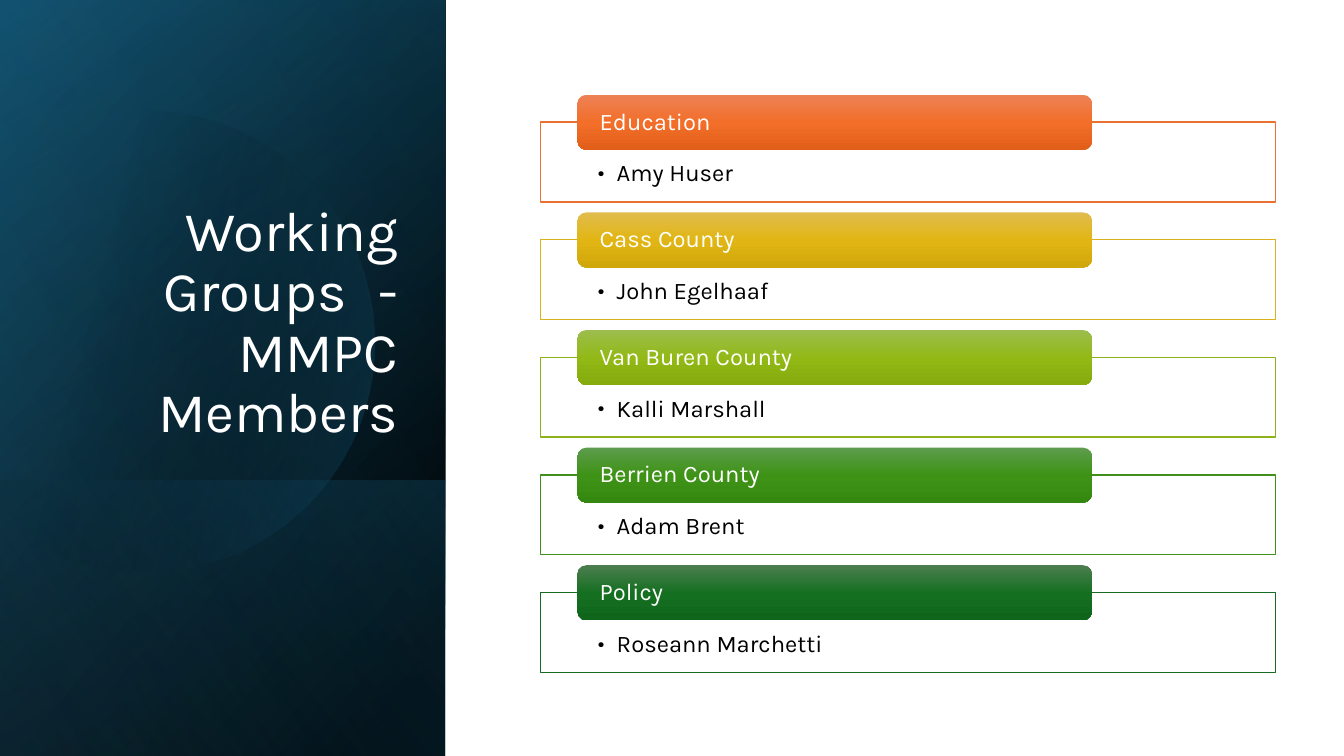
from pptx import Presentation
from pptx.dml.color import RGBColor
from pptx.enum.shapes import MSO_SHAPE
from pptx.enum.text import MSO_ANCHOR, MSO_AUTO_SIZE, PP_ALIGN
from pptx.oxml import parse_xml
from pptx.oxml.ns import nsdecls, qn
from pptx.util import Pt

PANEL_WIDTH = 318
PAGE_HEIGHT = 540
CARD_PITCH = 84

GROUPS = [
    ("Education", "Amy Huser", "E97132", ("ED8257", "F26E29", "E25F1A")),
    ("Cass County", "John Egelhaaf", "D8B11D", ("E1BC4E", "E1B614", "D0A70A")),
    ("Van Buren County", "Kalli Marshall", "8EB21E", ("9CBD4E", "92B916", "85AB0D")),
    ("Berrien County", "Adam Brent", "408E1C", ("5E9C4E", "3E9317", "35880F")),
    ("Policy", "Roseann Marchetti", "196B24", ("4D7E50", "156F21", "0F661B")),
]

# One point is a straight segment, three points are a Bézier curve.
DISC_START = (107, 79)
DISC_SEGMENTS = [
    [(177, 81), (241, 127), (261, 198)],
    [(287, 286), (236, 377), (149, 402)],
    [(94, 418), (38, 404), (-2, 370)],
    [(-11, 362)],
    [(-11, 126)],
    [(0, 116)],
    [(17, 102), (36, 92), (58, 86)],
    [(74, 81), (91, 79), DISC_START],
]


def color(value):
    return RGBColor.from_string(value)


class SlideBuilder:
    font = "Karla"
    white = "FFFFFF"
    black = "000000"

    def __init__(self, page):
        self.page = page

    def gradient(self, shape, stops, angle):
        """Fill with (position, colour, opacity) stops, positions and opacity in percent."""
        shape.shadow.inherit = False
        shape.line.fill.background()
        shape.fill.background()
        stop_xml = "".join(
            f'<a:gs pos="{position * 1000}"><a:srgbClr val="{value}">'
            f'<a:alpha val="{opacity * 1000}"/></a:srgbClr></a:gs>'
            for position, value, opacity in stops
        )
        fill = parse_xml(
            f'<a:gradFill {nsdecls("a")} rotWithShape="1"><a:gsLst>{stop_xml}</a:gsLst>'
            f'<a:lin ang="{angle * 60000}" scaled="0"/></a:gradFill>'
        )
        properties = shape.element.spPr
        properties.replace(properties.find(qn("a:noFill")), fill)

    def panel(self, stops, angle, height=PAGE_HEIGHT):
        """Add a layer of the left panel, standing on the bottom of the page."""
        middle = PAGE_HEIGHT - height / 2
        shape = self.page.shapes.add_shape(
            MSO_SHAPE.RECTANGLE,
            Pt((PANEL_WIDTH - height) / 2), Pt(middle - PANEL_WIDTH / 2),
            Pt(height), Pt(PANEL_WIDTH),
        )
        shape.rotation = 90
        shape.element.spPr.find(qn("a:xfrm")).set("flipH", "1")
        self.gradient(shape, stops, angle)

    def curved_outline(self, start, segments, stops, angle):
        """Add a freeform, turning each three-point segment into a curve."""
        outline = self.page.shapes.build_freeform(*start, scale=Pt(1))
        for segment in segments:
            outline.add_line_segments(segment, close=segment is segments[-1])
        shape = outline.convert_to_shape()
        lines = iter(list(shape.element.iter(qn("a:lnTo"))))
        for segment in segments:
            parts = [next(lines) for _ in segment]
            if len(parts) == 3:
                curve = parse_xml(f'<a:cubicBezTo {nsdecls("a")}/>')
                parts[0].addprevious(curve)
                for part in parts:
                    curve.append(part[0])
                    part.getparent().remove(part)
        self.gradient(shape, stops, angle)

    def format_text(self, shape, text, size, value, anchor, align=PP_ALIGN.LEFT):
        frame = shape.text_frame
        frame.text = text
        frame.word_wrap = True
        frame.auto_size = MSO_AUTO_SIZE.NONE
        frame.vertical_anchor = anchor
        para = frame.paragraphs[0]
        para.alignment = align
        para.line_spacing = 0.9
        for span in para.runs:
            span.font.name = self.font
            span.font.size = Pt(size)
            span.font.color.rgb = color(value)
        return frame

    def title(self, text):
        box = self.page.shapes.title
        box.left, box.top, box.width, box.height = Pt(46), Pt(132.5), Pt(245.5), Pt(188.8)
        self.format_text(box, text, 40, self.white, MSO_ANCHOR.BOTTOM, PP_ALIGN.RIGHT)
        box.element.getparent().append(box.element)

    def member_box(self, top, member, line):
        box = self.page.shapes.add_shape(
            MSO_SHAPE.RECTANGLE, Pt(386), Pt(top), Pt(525), Pt(57))
        box.shadow.inherit = False
        box.fill.solid()
        box.fill.fore_color.rgb = color(self.white)
        box.line.color.rgb = color(line)
        box.line.width = Pt(1)
        frame = self.format_text(box, member, 17, self.black, MSO_ANCHOR.TOP)
        frame.margin_left = frame.margin_right = Pt(41)
        frame.margin_top, frame.margin_bottom = Pt(28), Pt(9.5)
        para = frame.paragraphs[0]
        para.level = 1
        properties = para._p.get_or_add_pPr()
        properties.set("marL", str(Pt(13.5)))
        properties.set("indent", str(Pt(-13.5)))
        properties.append(parse_xml(f'<a:buFont {nsdecls("a")} typeface="{self.font}"/>'))
        properties.append(parse_xml(f'<a:buChar {nsdecls("a")} char="•"/>'))

    def group_header(self, top, name, shades):
        header = self.page.shapes.add_shape(
            MSO_SHAPE.ROUNDED_RECTANGLE, Pt(412.5), Pt(top), Pt(367.5), Pt(39.4))
        stops = [(position, shade, 100) for position, shade in zip((0, 50, 100), shades)]
        self.gradient(header, stops, 90)
        frame = self.format_text(header, name, 17, self.white, MSO_ANCHOR.MIDDLE)
        frame.margin_left = frame.margin_right = Pt(13.9)
        frame.margin_top = frame.margin_bottom = 0


def main():
    deck = Presentation()
    deck.slide_width, deck.slide_height = Pt(960), Pt(PAGE_HEIGHT)
    builder = SlideBuilder(deck.slides.add_slide(deck.slide_layouts[5]))

    builder.panel([(8, "000000", 100), (100, "104862", 100)], 50)
    builder.panel([(0, "000000", 0), (99, "156082", 46)], 30)
    builder.panel([(2, "156082", 29), (100, "000000", 30)], 130, height=197)
    builder.curved_outline(
        DISC_START, DISC_SEGMENTS, [(29, "000000", 0), (100, "156082", 43)], 14)
    builder.panel([(0, "000000", 0), (99, "46B1E1", 11)], 120)
    builder.title("Working Groups\t - MMPC Members")

    for index, (name, member, line, shades) in enumerate(GROUPS):
        offset = index * CARD_PITCH
        builder.member_box(87.25 + offset, member, line)
        builder.group_header(67.7 + offset, name, shades)

    deck.save("out.pptx")


if __name__ == "__main__":
    main()
